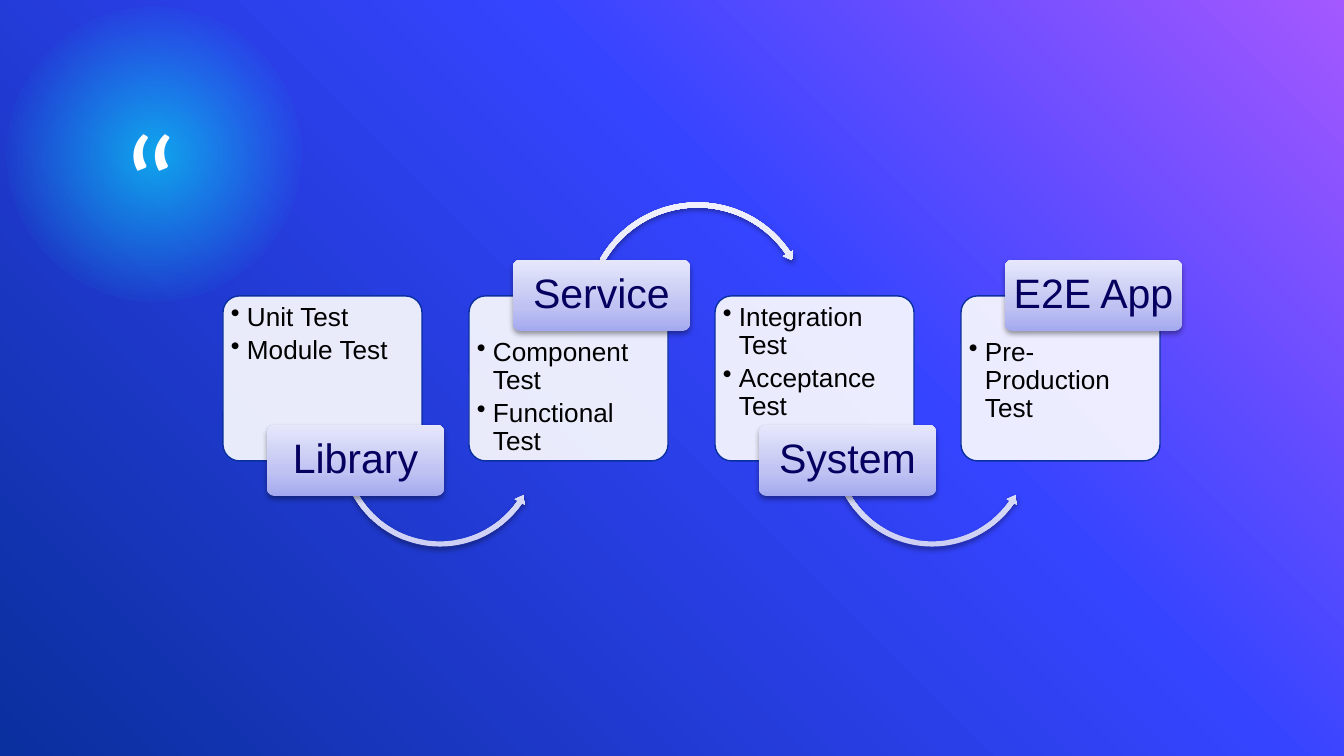
import pptx
import pptx.dml.color
import pptx.enum.shapes
import pptx.enum.text
import pptx.oxml
import pptx.oxml.ns
import pptx.util

RGB = pptx.dml.color.RGBColor
SHAPE = pptx.enum.shapes.MSO_SHAPE
ANCHOR = pptx.enum.text.MSO_ANCHOR
ALIGN = pptx.enum.text.PP_ALIGN
qn = pptx.oxml.ns.qn
NS = pptx.oxml.ns.nsdecls("a")

WHITE = RGB(0xFF, 0xFF, 0xFF)
BLACK = RGB(0x00, 0x00, 0x00)
NAVY = RGB(0x05, 0x00, 0x60)
BLUE = RGB(0x0A, 0x2F, 0x9E)
CYAN = RGB(0x00, 0xFF, 0xFF)
# Gradient stops: position %, colour, opacity %
BACKDROP = [(0, RGB(0xA4, 0x58, 0xFF), 100), (39, RGB(0x35, 0x44, 0xFF), 100), (100, BLUE, 100)]
GLOW = [(0, CYAN, 54), (73, CYAN, 0), (100, CYAN, 0)]
ARROW = [(0, RGB(0xCD, 0xD0, 0xF4), 100), (35, RGB(0xDB, 0xDD, 0xF7), 100),
         (100, RGB(0xF0, 0xF1, 0xFD), 100)]
LABEL = [(0, RGB(0xA4, 0xA9, 0xEF), 100), (35, RGB(0xC0, 0xC3, 0xF2), 100),
         (100, RGB(0xE6, 0xE7, 0xFB), 100)]
SHADOW = (f'<a:outerShdw {NS} blurRad="39370" dist="20320" dir="5400000" rotWithShape="0">'
          '<a:srgbClr val="000000"><a:alpha val="38000"/></a:srgbClr></a:outerShdw>')


def px(*lengths):
    return [round(length * 914400 / 134.4) for length in lengths]


def set_gradient(owner, fill, stops, angle=None):
    """Fill linearly at a clockwise angle, or from the centre when there is none."""
    fill.solid()
    steps = "".join(f'<a:gs pos="{pos * 1000}"><a:srgbClr val="{colour}">'
                    f'<a:alpha val="{opacity * 1000}"/></a:srgbClr></a:gs>'
                    for pos, colour, opacity in stops)
    if angle is None:
        course = ('<a:path path="circle"><a:fillToRect l="50000" t="50000" '
                  'r="50000" b="50000"/></a:path>')
    else:
        course = f'<a:lin ang="{angle * 60000}" scaled="0"/>'
    gradient = pptx.oxml.parse_xml(
        f'<a:gradFill {NS} rotWithShape="1"><a:gsLst>{steps}</a:gsLst>{course}</a:gradFill>')
    owner.replace(owner.find(qn("a:solidFill")), gradient)


deck = pptx.Presentation()
deck.slide_width, deck.slide_height = px(1344, 756)
slide = deck.slides.add_slide(deck.slide_layouts[6])
shapes = slide.shapes

# Background
backdrop = slide.background.fill
backdrop.solid()
set_gradient(slide.element.xpath("p:cSld/p:bg/p:bgPr")[0], backdrop, BACKDROP, 135)

# Glowing quotation mark
glow = shapes.add_shape(SHAPE.OVAL, *px(7, 7, 294, 294))
glow.shadow.inherit = False
glow.line.fill.background()
set_gradient(glow.element.spPr, glow.fill, GLOW)
quote = shapes.add_textbox(*px(121, 97, 90, 95)).text_frame
quote.word_wrap = True
quote.margin_left = quote.margin_right = quote.margin_top = quote.margin_bottom = 0
quote.text = "“"
quote.paragraphs[0].font.size = pptx.util.Pt(72)
quote.paragraphs[0].font.name = "Calibri"
quote.paragraphs[0].font.color.rgb = WHITE

# Test stages: labels alternate between the bottom and the top of their cards
stages = [
    ("Library", ["Unit Test", "Module Test"]),
    ("Service", ["Component Test", "Functional Test"]),
    ("System", ["Integration Test", "Acceptance Test"]),
    ("E2E App", ["Pre-Production Test"]),
]
for i, (stage, tests) in enumerate(stages):
    left = 223 + 246 * i
    label_on_top = i % 2 == 1

    # Card with its tests
    card = shapes.add_shape(SHAPE.ROUNDED_RECTANGLE, *px(left, 296, 199, 165))
    card.adjustments[0] = 0.1
    card.shadow.inherit = False
    card.fill.solid()
    card.fill.fore_color.rgb = WHITE
    card.element.spPr.find(qn("a:solidFill"))[0].append(
        pptx.oxml.parse_xml(f'<a:alpha {NS} val="90000"/>'))
    card.line.color.rgb = BLUE
    card.line.width = pptx.util.Pt(0.75)
    frame = card.text_frame
    frame.word_wrap = True
    frame.vertical_anchor = ANCHOR.TOP
    frame.margin_left, frame.margin_right, frame.margin_top, frame.margin_bottom = px(
        3, 3, 38 if label_on_top else 3, 0)
    frame.text = "\n".join(tests)
    for item in frame.paragraphs:
        bullet = item._p.get_or_add_pPr()
        bullet.set("marL", "109728")
        bullet.set("indent", "-109728")
        bullet.append(pptx.oxml.parse_xml(
            f'<a:buClr {NS}><a:srgbClr val="{BLACK}"/></a:buClr>'))
        bullet.append(pptx.oxml.parse_xml(f'<a:buChar {NS} char="•"/>'))
        item.alignment = ALIGN.LEFT
        item.line_spacing = 0.9
        item.space_after = pptx.util.Pt(2.4)
        item.font.size = pptx.util.Pt(14)
        item.font.name = "Arial"
        item.font.color.rgb = BLACK

    # Arrow to the next stage, then the label over its tail
    raised = []
    if i < len(stages) - 1:
        if label_on_top:
            arrow = shapes.add_shape(SHAPE.CIRCULAR_ARROW, *px(left + 113, 199, 231, 231))
            bends = (0.022, 2.655, 195.59, 125.755, 0.026)
        else:
            arrow = shapes.add_shape(SHAPE.LEFT_CIRCULAR_ARROW, *px(left + 114, 344, 206, 206))
            bends = (0.025, 3.002, 20.757, 90.245, 0.029)
        for n, bend in enumerate(bends):
            arrow.adjustments[n] = bend
        raised.append((arrow, ARROW))
    label = shapes.add_shape(SHAPE.ROUNDED_RECTANGLE,
                             *px(left + 44, 260 if label_on_top else 425, 177, 71))
    label.adjustments[0] = 0.1
    raised.append((label, LABEL))
    for part, stops in raised:
        part.shadow.inherit = False
        part.line.fill.background()
        set_gradient(part.element.spPr, part.fill, stops, 270)
        part.element.spPr.find(qn("a:effectLst")).append(pptx.oxml.parse_xml(SHADOW))

    caption = label.text_frame
    caption.word_wrap = True
    caption.vertical_anchor = ANCHOR.MIDDLE
    caption.margin_left, caption.margin_right, caption.margin_top, caption.margin_bottom = px(
        4, 4, 4, 4)
    caption.text = stage
    name = caption.paragraphs[0]
    name.alignment = ALIGN.CENTER
    name.line_spacing = 0.9
    name.font.size = pptx.util.Pt(22)
    name.font.name = "Arial"
    name.font.color.rgb = NAVY

deck.save("out.pptx")
